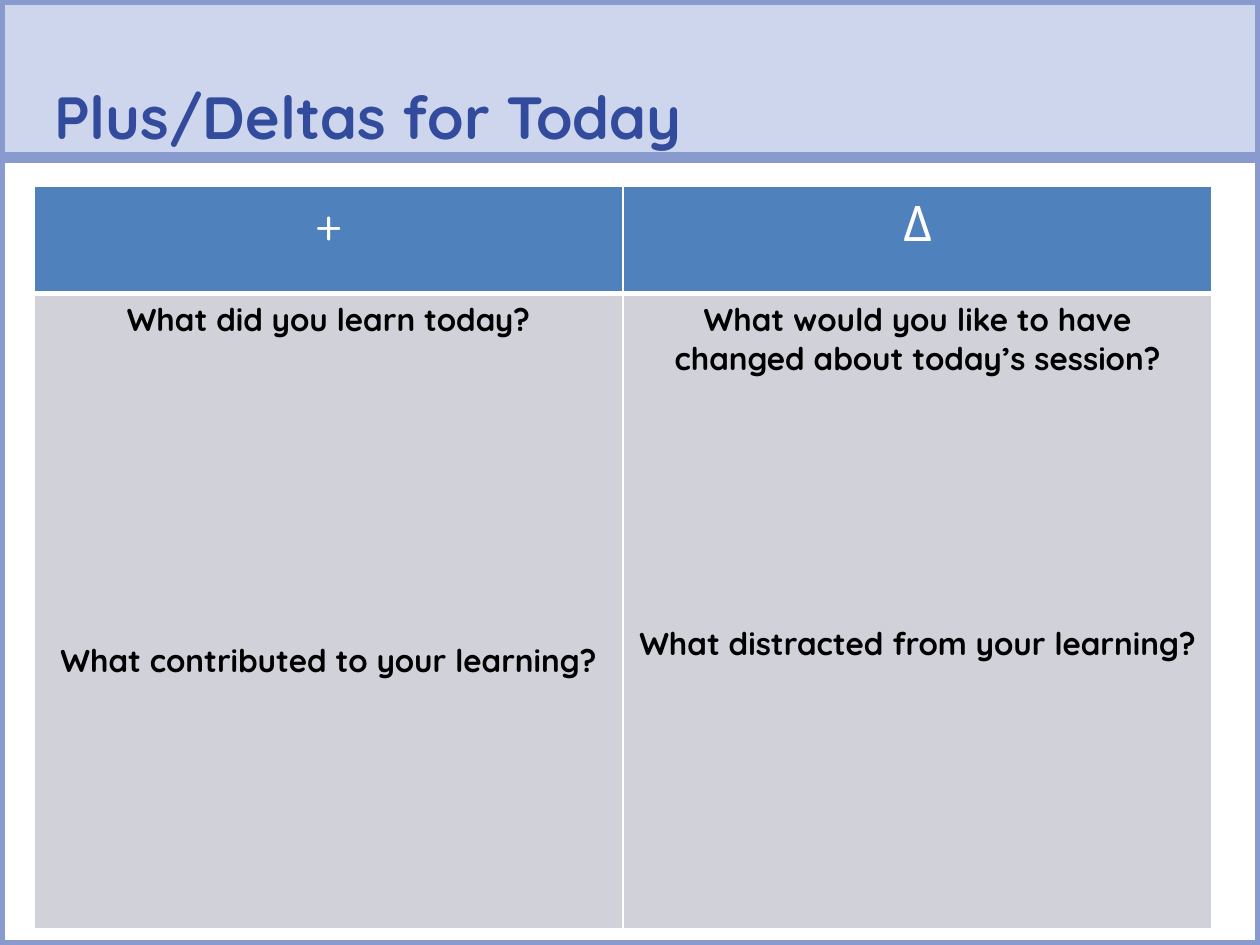
from dataclasses import dataclass

from lxml.etree import SubElement
from pptx import Presentation
from pptx.dml.color import RGBColor
from pptx.enum.shapes import MSO_SHAPE
from pptx.enum.text import MSO_ANCHOR, MSO_AUTO_SIZE, PP_ALIGN
from pptx.oxml.ns import qn
from pptx.util import Inches, Pt

WHITE = RGBColor(0xFF, 0xFF, 0xFF)
BLACK = RGBColor(0x00, 0x00, 0x00)
BORDER_BLUE = RGBColor(0x89, 0x9A, 0xCE)
BANNER_BLUE = RGBColor(0xCE, 0xD6, 0xED)
TITLE_BLUE = RGBColor(0x33, 0x4B, 0x9C)
HEADER_BLUE = RGBColor(0x4F, 0x81, 0xBD)
BODY_GRAY = RGBColor(0xD1, 0xD1, 0xDA)

FONT = "Quicksand"
TITLE_FORMAT = {"name": FONT, "size": Pt(34), "bold": True}
SYMBOL_FORMAT = {"name": FONT, "size": Pt(28), "bold": False}
QUESTION_FORMAT = {"name": FONT, "size": Pt(18), "bold": True}
ANSWER_LINE = 32.5


@dataclass
class FeedbackColumn:
    symbol: str
    questions: list[str]
    answer_lines: int


FEEDBACK = [
    FeedbackColumn("+", ["What did you learn today?", "What contributed to your learning?"], 5),
    FeedbackColumn(
        "Δ",
        ["What would you like to have changed about today’s session?",
         "What distracted from your learning?"],
        4,
    ),
]


def format_font(font, values: dict, color: RGBColor) -> None:
    for attribute, value in values.items():
        setattr(font, attribute, value)
    font.color.rgb = color


def outline(box) -> None:
    box.line.color.rgb = BORDER_BLUE
    box.line.width = Pt(6)


def add_borders(cell, widths: dict[str, float]) -> None:
    properties = cell._tc.get_or_add_tcPr()
    for position, (side, width) in enumerate(widths.items()):
        border = SubElement(properties, qn(f"a:{side}"), w=str(Pt(width)))
        fill = SubElement(border, qn("a:solidFill"))
        SubElement(fill, qn("a:srgbClr"), val=str(WHITE))
        properties.remove(border)
        properties.insert(position, border)


def fill_cell(cell, lines: list[str], values: dict, color: RGBColor,
              background: RGBColor, gap: float = 0) -> None:
    cell.fill.solid()
    cell.fill.fore_color.rgb = background
    cell.text_frame.text = "\n".join(lines)
    for index, paragraph in enumerate(cell.text_frame.paragraphs):
        paragraph.alignment = PP_ALIGN.CENTER
        paragraph.space_before = Pt(gap if index else 0)
        paragraph.space_after = Pt(10)
        format_font(paragraph.runs[0].font, values, color)


def add_frame(slide) -> None:
    frame = slide.shapes.add_shape(
        MSO_SHAPE.RECTANGLE, 0, Inches(1.25), Inches(10), Inches(6.25))
    frame.shadow.inherit = False
    frame.fill.background()
    outline(frame)


def add_title(slide, wording: str) -> None:
    title = slide.shapes.title
    title.left, title.top, title.width, title.height = 0, 0, Inches(10), Inches(1.25)
    title.fill.solid()
    title.fill.fore_color.rgb = BANNER_BLUE
    outline(title)
    title.text = wording
    frame_format = {
        "margin_left": Inches(0.43), "margin_top": 0,
        "margin_right": Inches(0.5), "margin_bottom": Inches(0.05),
        "vertical_anchor": MSO_ANCHOR.BOTTOM, "word_wrap": True,
        "auto_size": MSO_AUTO_SIZE.NONE,
    }
    for attribute, value in frame_format.items():
        setattr(title.text_frame, attribute, value)
    paragraph = title.text_frame.paragraphs[0]
    paragraph.alignment = PP_ALIGN.LEFT
    paragraph.line_spacing = Pt(26)
    format_font(paragraph.runs[0].font, TITLE_FORMAT, TITLE_BLUE)


def add_feedback_table(slide, columns: list[FeedbackColumn]) -> None:
    table = slide.shapes.add_table(
        2, len(columns), Inches(0.27), Inches(1.48), Inches(9.35), Inches(5.89)).table
    table.rows[0].height = Inches(0.85)
    table.rows[1].height = Inches(5.04)
    for index, column in enumerate(columns):
        header, body = table.cell(0, index), table.cell(1, index)
        fill_cell(header, [column.symbol], SYMBOL_FORMAT, WHITE, HEADER_BLUE)
        fill_cell(body, column.questions, QUESTION_FORMAT, BLACK, BODY_GRAY,
                  column.answer_lines * ANSWER_LINE)
        add_borders(header, {"lnL": 1, "lnR": 1, "lnT": 1, "lnB": 3})
        add_borders(body, {"lnL": 1, "lnR": 1, "lnT": 3, "lnB": 1})


def main() -> None:
    presentation = Presentation()
    presentation.slide_width = Inches(10)
    presentation.slide_height = Inches(7.5)
    slide = presentation.slides.add_slide(presentation.slide_layouts[5])
    add_frame(slide)
    add_title(slide, "Plus/Deltas for Today")
    add_feedback_table(slide, FEEDBACK)
    presentation.save("out.pptx")


if __name__ == "__main__":
    main()
